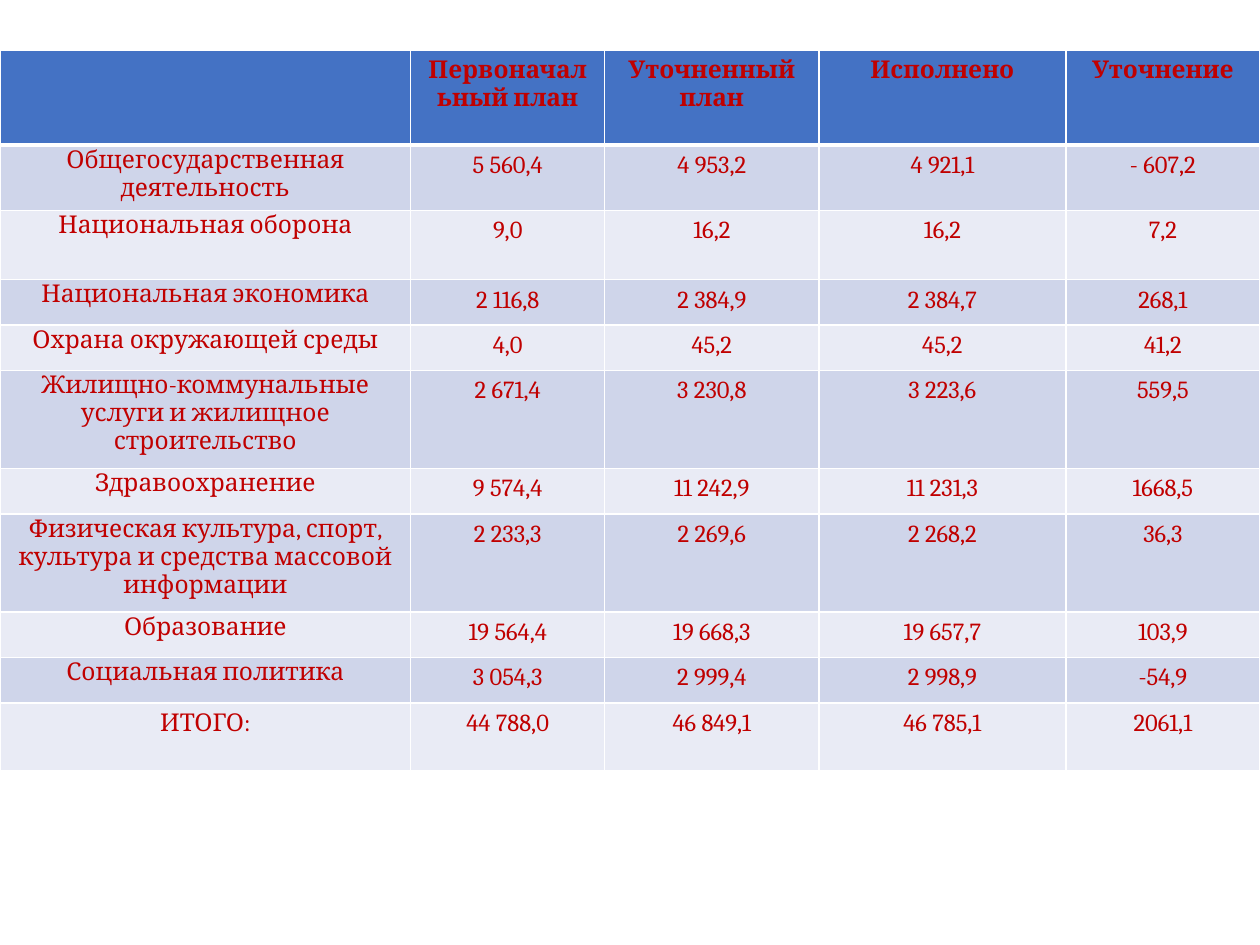
from lxml.etree import SubElement
from pptx import Presentation
from pptx.dml.color import RGBColor
from pptx.enum.text import PP_ALIGN
from pptx.oxml.ns import qn
from pptx.util import Inches, Pt

HEADER_BLUE = RGBColor(0x44, 0x72, 0xC4)
BAND_DARK = RGBColor(0xCF, 0xD5, 0xEA)
BAND_LIGHT = RGBColor(0xE9, 0xEB, 0xF5)
TEXT_RED = RGBColor(0xC0, 0x00, 0x00)
WHITE = RGBColor(0xFF, 0xFF, 0xFF)

COLUMN_WIDTHS = [3.26, 1.54, 1.7, 1.96, 1.54]
LINE_ROW = 0.36
ROW_HEIGHTS = [0.75, 0.52, 0.55, LINE_ROW, LINE_ROW, 0.78,
               LINE_ROW, 0.78, LINE_ROW, LINE_ROW, 0.54]

BUDGET = [
    ("", "Первоначальный план", "Уточненный план", "Исполнено", "Уточнение"),
    ("Общегосударственная деятельность", "5 560,4", "4 953,2", "4 921,1", "- 607,2"),
    ("Национальная оборона", "9,0", "16,2", "16,2", "7,2"),
    ("Национальная экономика", "2 116,8", "2 384,9", "2 384,7", "268,1"),
    ("Охрана окружающей среды", "4,0", "45,2", "45,2", "41,2"),
    ("Жилищно-коммунальные услуги и жилищное строительство",
     "2 671,4", "3 230,8", "3 223,6", "559,5"),
    ("Здравоохранение", "9 574,4", "11 242,9", "11 231,3", "1668,5"),
    ("Физическая культура, спорт, культура и средства массовой информации",
     "2 233,3", "2 269,6", "2 268,2", "36,3"),
    ("Образование", "19 564,4", "19 668,3", "19 657,7", "103,9"),
    ("Социальная политика", "3 054,3", "2 999,4", "2 998,9", "-54,9"),
    ("ИТОГО:", "44 788,0", "46 849,1", "46 785,1", "2061,1"),
]


def set_borders(cell, **widths):
    """Draw white cell borders: L, R, T and B in points."""
    properties = cell._tc.get_or_add_tcPr()
    for side in "LRTB":
        line = SubElement(properties, qn(f"a:ln{side}"), w=str(Pt(widths.get(side, 1))))
        solid = SubElement(line, qn("a:solidFill"))
        SubElement(solid, qn("a:srgbClr"), val=str(WHITE))


def write_cell(cell, text, bold):
    para = cell.text_frame.paragraphs[0]
    para.alignment = PP_ALIGN.CENTER
    if text:
        span = para.add_run()
        span.text = text
        span.font.name = "Cambria"
        span.font.size = Pt(14)
        span.font.bold = bold
        span.font.color.rgb = TEXT_RED


def add_budget_table(page, left, top, width, height):
    table = page.shapes.add_table(len(BUDGET), len(COLUMN_WIDTHS),
                                  left, top, width, height).table
    table.first_row = table.horz_banding = False
    for column, share in zip(table.columns, COLUMN_WIDTHS):
        column.width = int(width * share / sum(COLUMN_WIDTHS))
    for row, share in zip(table.rows, ROW_HEIGHTS):
        row.height = int(height * share / sum(ROW_HEIGHTS))

    last_row = len(BUDGET) - 1
    for row_index, texts in enumerate(BUDGET):
        is_header = row_index == 0
        band = BAND_DARK if row_index % 2 else BAND_LIGHT
        for column_index, text in enumerate(texts):
            cell = table.cell(row_index, column_index)
            # A thick rule parts the header from the body
            set_borders(cell, B=3 if is_header else 1, T=3 if row_index == 1 else 1)
            cell.fill.solid()
            cell.fill.fore_color.rgb = HEADER_BLUE if is_header else band
            # Section names sit tight in their cells
            if column_index == 0 and 0 < row_index < last_row:
                cell.margin_left = cell.margin_right = cell.margin_top = Inches(0.01)
                cell.margin_bottom = 0
            write_cell(cell, text, is_header)


def main():
    deck = Presentation()
    deck.slide_width, deck.slide_height = Inches(10), Inches(7.5)
    page = deck.slides.add_slide(deck.slide_layouts[6])
    add_budget_table(page, 0, Inches(0.4), deck.slide_width, Inches(sum(ROW_HEIGHTS)))
    deck.save("out.pptx")


if __name__ == "__main__":
    main()
